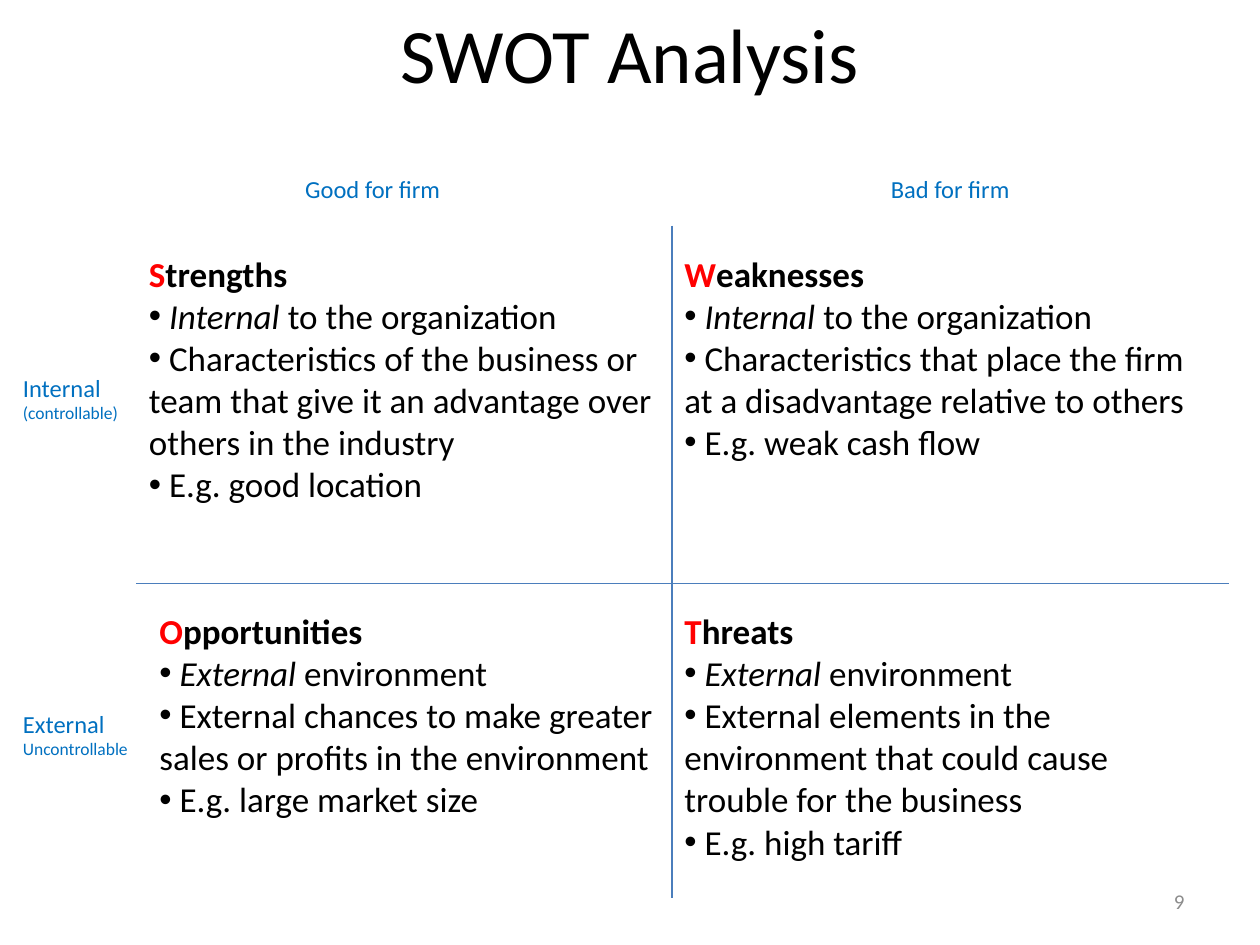
from lxml import etree
from pptx import Presentation
from pptx.dml.color import RGBColor
from pptx.enum.shapes import MSO_CONNECTOR
from pptx.enum.text import MSO_ANCHOR, PP_ALIGN
from pptx.oxml.ns import qn
from pptx.util import Pt

BLACK = RGBColor(0x00, 0x00, 0x00)
RED = RGBColor(0xFF, 0x00, 0x00)
BLUE = RGBColor(0x00, 0x70, 0xC0)
LINE_BLUE = RGBColor(0x4B, 0x7E, 0xBC)
GRAY = RGBColor(0x8C, 0x8C, 0x8C)
STRAIGHT = MSO_CONNECTOR.STRAIGHT
LEFT, CENTER, RIGHT = PP_ALIGN.LEFT, PP_ALIGN.CENTER, PP_ALIGN.RIGHT
TOP, MIDDLE = MSO_ANCHOR.TOP, MSO_ANCHOR.MIDDLE
FONT = "Calibri"
TITLE_ONLY = 5

# Quadrants: box (left, top, width, height), heading, scope, rest of scope line, points
QUADRANTS = [
    ((78, 141, 312, 177), "Strengths", "Internal", " to the organization",
     ["Characteristics of the business or team that give it an advantage over "
      "others in the industry", "E.g. good location"]),
    ((384, 141, 312, 153), "Weaknesses", "Internal", " to the organization",
     ["Characteristics that place the firm at a disadvantage relative to others",
      "E.g. weak cash flow"]),
    ((84, 345, 312, 153), "Opportunities", "External", " environment",
     ["External chances to make greater sales or profits in the environment",
      "E.g. large market size"]),
    ((384, 345, 312, 177), "Threats", "External", " environment",
     ["External elements in the environment that could cause trouble for the "
      "business", "E.g. high tariff"]),
]
COLUMN_HEADS = [((144, 96, 138, 24), "Good for firm"),
                ((474, 96, 138, 24), "Bad for firm")]
ROW_HEADS = [((6, 209.5, 78, 37), "Internal", "(controllable)"),
             ((6, 401.5, 84, 37), "External", "Uncontrollable")]


def add_run(p, text, size=20, color=BLACK, bold=False, italic=False):
    r = p.add_run()
    r.text = text
    r.font.name = FONT
    r.font.size = Pt(size)
    r.font.color.rgb = color
    r.font.bold = bold
    r.font.italic = italic


def add_text_box(slide, box, align=LEFT, anchor=TOP):
    """Add an empty text box and return its text frame."""
    tf = slide.shapes.add_textbox(*map(Pt, box)).text_frame
    tf.word_wrap = True
    tf.vertical_anchor = anchor
    tf.paragraphs[0].alignment = align
    return tf


def add_bullet(tf):
    """Add a paragraph whose bullet runs in with the text."""
    p = tf.add_paragraph()
    pPr = p._p.get_or_add_pPr()
    etree.SubElement(pPr, qn("a:buFont")).set("typeface", "Arial")
    etree.SubElement(pPr, qn("a:buChar")).set("char", "•")
    return p


def add_title(slide, box, text):
    title = slide.shapes.title
    title.left, title.top, title.width, title.height = map(Pt, box)
    tf = title.text_frame
    tf.vertical_anchor = MIDDLE
    p = tf.paragraphs[0]
    p.alignment = CENTER
    add_run(p, text, size=44)


def add_axes(slide, box):
    """Draw the cross that parts the four quadrants."""
    left, top, width, height = box
    middle_x, middle_y = 384, 333.5
    for ends in ((middle_x, top, middle_x, top + height),
                 (left, middle_y, left + width, middle_y)):
        line = slide.shapes.add_connector(STRAIGHT, *map(Pt, ends))
        line.line.color.rgb = LINE_BLUE
        line.line.width = Pt(0.75)
        etree.SubElement(line._element.spPr, qn("a:effectLst"))


def add_quadrant(slide, box, heading, scope, scope_rest, points):
    tf = add_text_box(slide, box)
    # Heading with a red initial
    p = tf.paragraphs[0]
    add_run(p, heading[0], color=RED, bold=True)
    add_run(p, heading[1:], bold=True)
    # Scope line, then the points
    p = add_bullet(tf)
    add_run(p, " ")
    add_run(p, scope, italic=True)
    add_run(p, scope_rest)
    for point in points:
        add_run(add_bullet(tf), " " + point)


def add_column_head(slide, box, text):
    tf = add_text_box(slide, box, align=CENTER)
    add_run(tf.paragraphs[0], text, size=14, color=BLUE)


def add_row_head(slide, box, text, note):
    tf = add_text_box(slide, box)
    add_run(tf.paragraphs[0], text, size=14, color=BLUE)
    add_run(tf.add_paragraph(), note, size=10, color=BLUE)


def add_page_number(slide, box, number):
    tf = add_text_box(slide, box, align=RIGHT, anchor=MIDDLE)
    add_run(tf.paragraphs[0], number, size=12, color=GRAY)


def main():
    prs = Presentation()
    prs.slide_width, prs.slide_height = Pt(720), Pt(540)
    s = prs.slides.add_slide(prs.slide_layouts[TITLE_ONLY])

    add_title(s, (36, 0, 648, 60), "SWOT Analysis")
    add_axes(s, (78, 129, 624, 384))
    for quadrant in QUADRANTS:
        add_quadrant(s, *quadrant)
    for head in ROW_HEADS:
        add_row_head(s, *head)
    for head in COLUMN_HEADS:
        add_column_head(s, *head)
    add_page_number(s, (516, 500.5, 168, 28.75), "9")

    prs.save("out.pptx")


if __name__ == "__main__":
    main()
